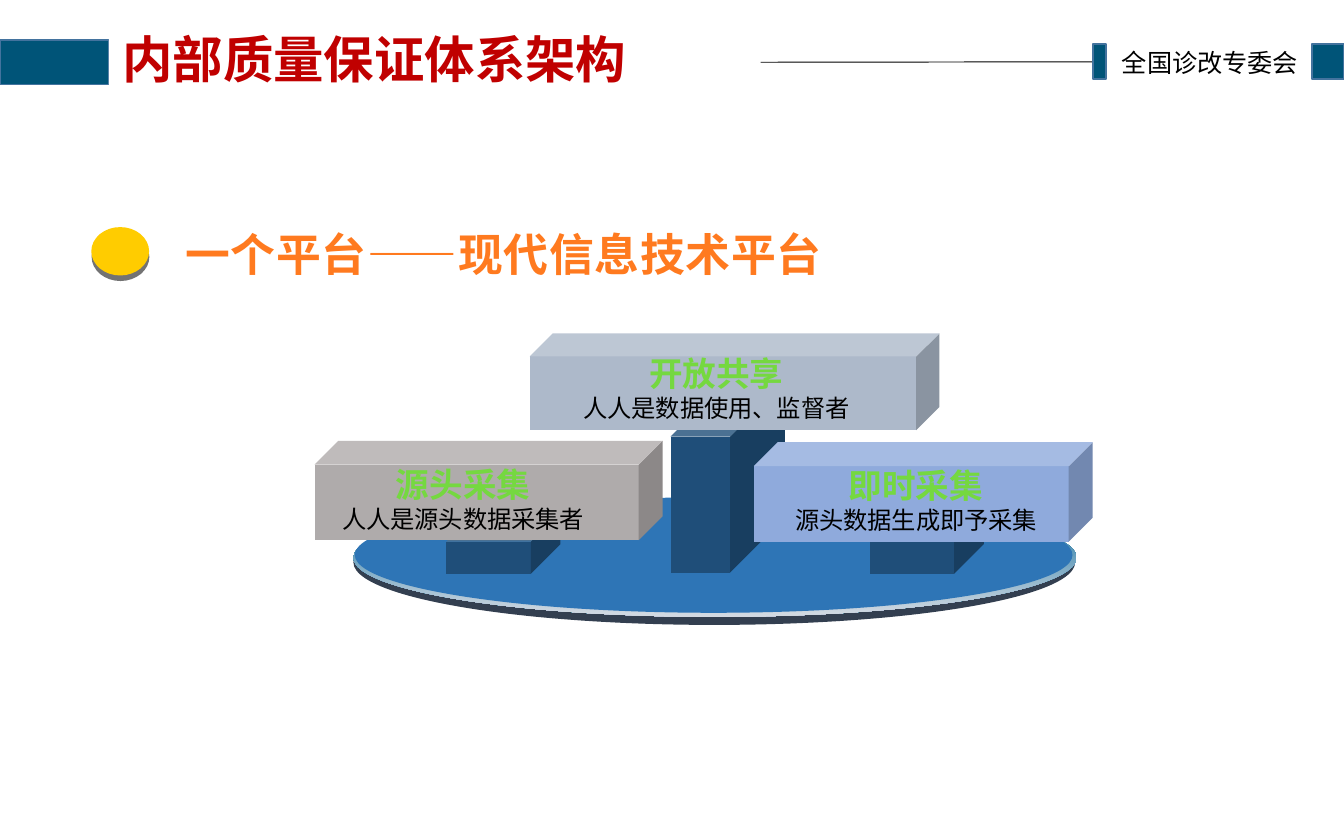
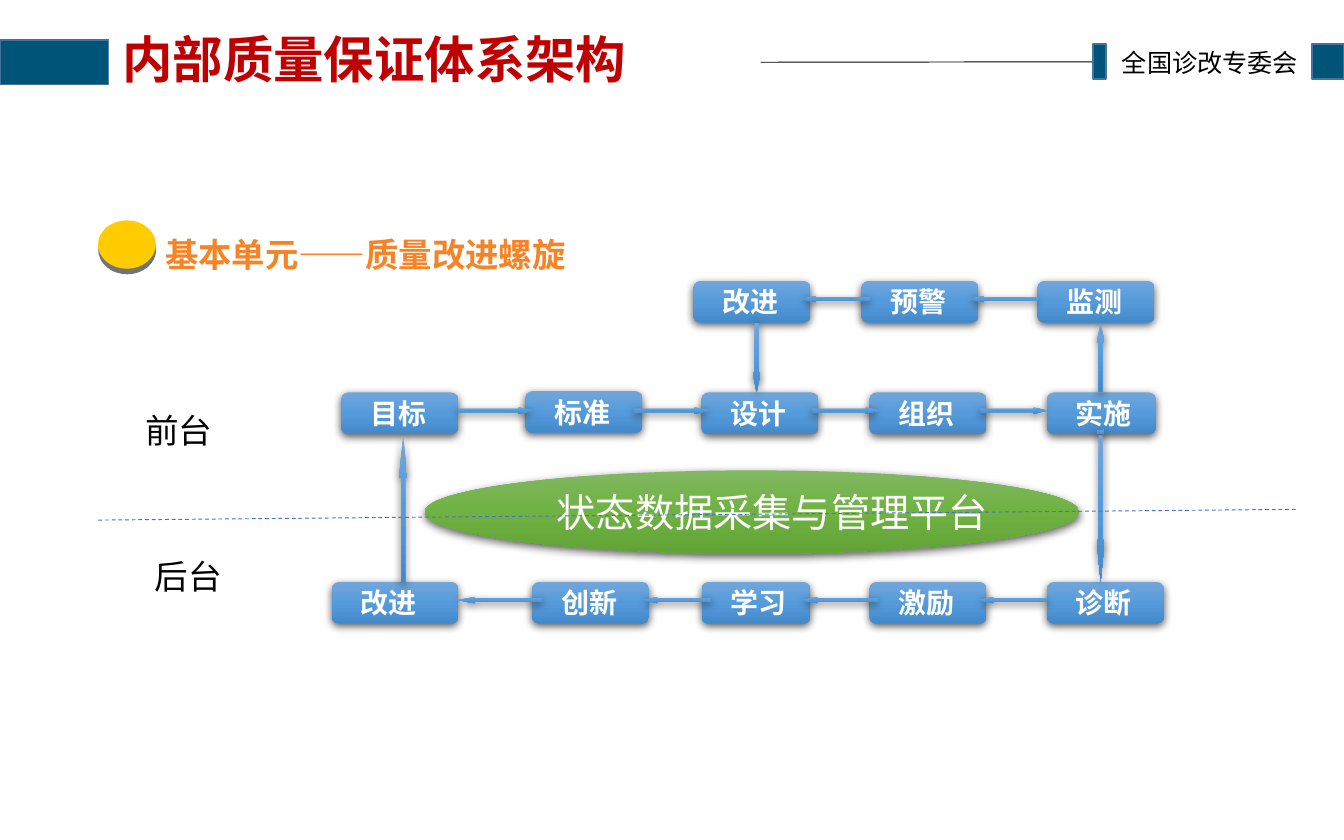
from math import cos, pi, sin
from lxml.etree import SubElement
from pptx import Presentation
from pptx.dml.color import RGBColor
from pptx.enum.dml import MSO_LINE_DASH_STYLE as DASH
from pptx.enum.shapes import MSO_CONNECTOR, MSO_SHAPE as SHAPE
from pptx.enum.text import MSO_ANCHOR as ANCHOR, MSO_AUTO_SIZE as AUTO, PP_ALIGN as ALIGN
from pptx.oxml.ns import qn
from pptx.util import Inches, Pt

COLORS = {
    "white": "FFFFFF", "black": "000000", "band": "005478", "band_line": "43739E",
    "title": "C00000", "orange": "F68426", "yellow": "FFCC00", "dash": "4472C4",
    "disc_edge": "333F50", "disc": "2E75B6", "pillar": "1F4E79",
    "stone": "AFABAB", "slate": "ADB9CA", "sky": "8FAADC",
}
GRADIENTS = {
    "rim": [(0, "006699"), (100, "D5DBE3")],
    "blue": [(0, "71A6DB"), (50, "559BDB"), (100, "448ACA")],
    "green": [(0, "81B861"), (50, "6FB242"), (100, "62A336")],
    "lime_text": [(0, "336F0A"), (78, "75D840"), (100, "F2FBEE")],
    "orange_text": [(25, "FF7A1F"), (100, "CA5200")],
}
CJK = "Noto Sans CJK SC"
LATIN = "Calibri"
INSET = (0.1, 0.05, 0.1, 0.05)
SOFT = (63, 4.5, 1.5, 90)
HARD = (55, 0, 3, 87)


class Deck:
    def __init__(self):
        self.prs = Presentation()
        self.prs.slide_width, self.prs.slide_height = Inches(10), Inches(6.25)
        self.s = None

    def paint(self, fill, props, color):
        if color not in GRADIENTS:
            fill.solid()
            fill.fore_color.rgb = RGBColor.from_string(COLORS[color])
            return
        fill.gradient()
        grad = props.find(qn("a:gradFill"))
        stops = grad.find(qn("a:gsLst"))
        for stop in list(stops):
            stops.remove(stop)
        for pos, value in GRADIENTS[color]:
            gs = SubElement(stops, qn("a:gs"), pos=str(pos * 1000))
            SubElement(gs, qn("a:srgbClr"), val=value)
        grad.find(qn("a:lin")).set("ang", "5400000")

    def finish(self, sp, color, line=None, shadow=None):
        props = sp._element.spPr
        self.paint(sp.fill, props, color)
        if line:
            sp.line.color.rgb = RGBColor.from_string(COLORS[line])
            sp.line.width = Pt(1)
        else:
            sp.line.fill.background()
        sp.shadow.inherit = False
        if shadow:
            alpha, blur, dist, angle = shadow
            outer = SubElement(props.find(qn("a:effectLst")), qn("a:outerShdw"),
                               blurRad=str(Pt(blur)), dist=str(Pt(dist)),
                               dir=str(angle * 60000), algn="ctr", rotWithShape="0")
            clr = SubElement(outer, qn("a:srgbClr"), val=COLORS["black"])
            SubElement(clr, qn("a:alpha"), val=str(alpha * 1000))

    def shape(self, kind, at, color, adj=(), line=None, shadow=None):
        sp = self.s.shapes.add_shape(kind, *map(Inches, at))
        for i, value in enumerate(adj):
            sp.adjustments[i] = value
        self.finish(sp, color, line, shadow)
        return sp

    def frame(self, sp, inset=INSET, wrap=True, anchor=ANCHOR.TOP, auto=AUTO.NONE):
        tf = sp.text_frame
        tf.word_wrap, tf.auto_size, tf.vertical_anchor = wrap, auto, anchor
        (tf.margin_left, tf.margin_top,
         tf.margin_right, tf.margin_bottom) = map(Inches, inset)
        return tf

    def run(self, p, text, size, color, bold=False, font=CJK, spacing=None):
        r = p.add_run()
        r.text = text
        r.font.size, r.font.bold, r.font.name = Pt(size), bold, font
        props = r._r.get_or_add_rPr()
        self.paint(r.font.fill, props, color)
        SubElement(props, qn("a:ea"), typeface=font)
        if spacing:
            props.set("spc", str(int(spacing * 100)))

    def text(self, at, lines, align=ALIGN.LEFT, leading=None, **frame):
        tf = self.frame(self.s.shapes.add_textbox(*map(Inches, at)), **frame)
        for i, style in enumerate(lines):
            p = tf.add_paragraph() if i else tf.paragraphs[0]
            p.alignment = align
            if leading:
                p.line_spacing = leading
            self.run(p, **style)

    def line(self, start, end, color, dash=None):
        ln = self.s.shapes.add_connector(MSO_CONNECTOR.STRAIGHT, *map(Inches, start + end))
        ln.line.color.rgb = RGBColor.from_string(COLORS[color])
        ln.line.width = Pt(0.5)
        if dash:
            ln.line.dash_style = dash
        SubElement(ln._element.spPr, qn("a:effectLst"))

    def band(self, *at):
        self.shape(SHAPE.RECTANGLE, at, "band", line="band_line")

    def slide(self):
        self.s = self.prs.slides.add_slide(self.prs.slide_layouts[5])
        self.band(9.76, 0.33, 0.24, 0.26)
        self.line((8.13, 0.46), (0.81, 0.47), "black")
        self.band(8.13, 0.33, 0.1, 0.26)
        self.text((8.25, 0.3, 1.53, 0.33),
                  [dict(text="全国诊改专委会", size=13.5, color="black")],
                  wrap=False, auto=AUTO.SHAPE_TO_FIT_TEXT)
        self.band(0, 0.3, 0.81, 0.33)

    def title(self, text):
        sp = self.s.shapes.title
        sp.left, sp.top, sp.width, sp.height = map(Inches, (0.81, 0.1, 4.85, 0.73))
        self.paint(sp.fill, sp._element.spPr, "white")
        p = self.frame(sp, anchor=ANCHOR.MIDDLE).paragraphs[0]
        p.alignment, p.line_spacing = ALIGN.LEFT, 0.9
        self.run(p, text, 27, "title", bold=True)
        self.s.shapes._spTree.append(sp._element)

    def coin(self, x, y, w=0.43, h=0.36, sides=32):
        pts = [(Inches(x + w / 2 * (1 + sin(2 * pi * i / sides))),
                Inches(y + h / 2 * (1 + cos(2 * pi * i / sides)))) for i in range(sides)]
        fb = self.s.shapes.build_freeform(*pts[0])
        fb.add_line_segments(pts[1:], close=True)
        self.finish(fb.convert_to_shape(), "yellow", shadow=HARD)

    def cube(self, at, color, depth):
        self.shape(SHAPE.CUBE, at, color, adj=[depth])

    def caption(self, at, head, detail):
        self.text(at, [dict(text=head, size=18, color="lime_text", bold=True),
                       dict(text=detail, size=13, color="black")],
                  align=ALIGN.CENTER, auto=AUTO.SHAPE_TO_FIT_TEXT)

    def node(self, kind, at, text, color, size, indent, bold=False, adj=()):
        sp = self.shape(kind, at, color, adj=adj, shadow=SOFT)
        tf = self.frame(sp, (indent, 0.05, 0.1, 0.05), wrap=False, anchor=ANCHOR.MIDDLE)
        p = tf.paragraphs[0]
        p.alignment = ALIGN.LEFT
        self.run(p, text, size, "white", bold, LATIN)

    def arrow(self, kind, x, y, length):
        if kind in (SHAPE.UP_ARROW, SHAPE.DOWN_ARROW):
            size, head = (0.06, length), 4.8 * length
        else:
            size, head = (length, 0.05), 4 * length
        self.shape(kind, (x, y, *size), "blue", adj=[0.5, head], shadow=SOFT)


def platform_slide(deck):
    deck.slide()
    for at, color in [((2.63, 3.72, 5.37, 0.93), "disc_edge"),
                      ((2.63, 3.71, 5.38, 0.88), "rim"),
                      ((2.64, 3.7, 5.34, 0.86), "disc")]:
        deck.shape(SHAPE.OVAL, at, color)
    for pillar, block, color in [
        ((3.32, 3.81, 0.85, 0.46), (2.34, 3.28, 2.59, 0.74), "stone"),
        ((4.99, 2.84, 0.85, 1.42), (3.94, 2.48, 3.05, 0.72), "slate"),
        ((6.47, 3.81, 0.85, 0.46), (5.61, 3.29, 2.52, 0.74), "sky"),
    ]:
        deck.cube(pillar, "pillar", 0.48)
        deck.cube(block, color, 0.24)
    deck.caption((2.35, 3.4, 2.19, 0.62), "源头采集", "人人是源头数据采集者")
    deck.caption((5.72, 3.41, 2.19, 0.62), "即时采集", "源头数据生成即予采集")
    deck.caption((4.01, 2.58, 2.64, 0.62), "开放共享", "人人是数据使用、监督者")
    deck.text((1.28, 1.68, 5, 0.47),
              [dict(text="一个平台——现代信息技术平台", size=24, color="orange_text",
                    bold=True, spacing=0.4)],
              leading=0.9, auto=AUTO.SHAPE_TO_FIT_TEXT)
    deck.coin(0.68, 1.69)
    deck.title("内部质量保证体系架构")


def spiral_slide(deck):
    deck.slide()
    for x, y, w, label in [
        (6.41, 2.09, 0.87, "预警"), (7.72, 2.09, 0.87, "监测"),
        (2.54, 2.92, 0.87, "目标"), (3.91, 2.91, 0.87, "标准"),
        (5.22, 2.92, 0.87, "设计"), (6.47, 2.92, 0.87, "组织"),
        (7.79, 2.92, 0.81, "实施"), (2.47, 4.33, 0.94, "改进"),
        (3.96, 4.33, 0.87, "创新"), (5.22, 4.33, 0.81, "学习"),
        (6.47, 4.33, 0.87, "激励"), (7.79, 4.33, 0.87, "诊断"),
        (5.16, 2.09, 0.87, "改进"),
    ]:
        deck.node(SHAPE.ROUNDED_RECTANGLE, (x, y, w, 0.31), label, "blue", 15, 0.2,
                  bold=True, adj=[0.17])
    deck.node(SHAPE.OVAL, (3.16, 3.5, 4.87, 0.62), "状态数据采集与管理平台",
              "green", 21, 0.27)
    for kind, arrows in [
        (SHAPE.RIGHT_ARROW, [(3.41, 3.03, 0.56), (4.72, 3.03, 0.56), (6.04, 3.03, 0.5),
                             (7.29, 3.03, 0.5), (8.16, 3.19, 0.06)]),
        (SHAPE.DOWN_ARROW, [(8.16, 3.24, 1.09)]),
        (SHAPE.LEFT_ARROW, [(7.29, 4.44, 0.5), (5.97, 4.44, 0.56), (4.79, 4.44, 0.5),
                            (3.41, 4.44, 0.62)]),
        (SHAPE.UP_ARROW, [(2.97, 3.24, 1.09), (8.16, 2.4, 0.52)]),
        (SHAPE.LEFT_ARROW, [(7.22, 2.2, 0.5), (5.97, 2.2, 0.5)]),
        (SHAPE.DOWN_ARROW, [(5.6, 2.4, 0.52)]),
    ]:
        for x, y, length in arrows:
            deck.arrow(kind, x, y, length)
    deck.text((1.16, 1.55, 8.15, 0.54),
              [dict(text="基本单元——质量改进螺旋", size=17.9, color="orange", bold=True)],
              leading=1.5, inset=(0.07, 0.04, 0.07, 0.04))
    deck.coin(0.73, 1.64)
    deck.title("内部质量保证体系架构")
    deck.line((9.64, 3.79), (0.73, 3.87), "dash", DASH.DASH)
    for at, label in [((0.94, 3.04, 0.78, 0.28), "前台"), ((1.09, 4.13, 0.62, 0.48), "后台")]:
        deck.text(at, [dict(text=label, size=18, color="black")],
                  align=ALIGN.CENTER, inset=(0.02, 0.01, 0.02, 0.01))


def main():
    deck = Deck()
    platform_slide(deck)
    spiral_slide(deck)
    deck.prs.save("out.pptx")


if __name__ == "__main__":
    main()
